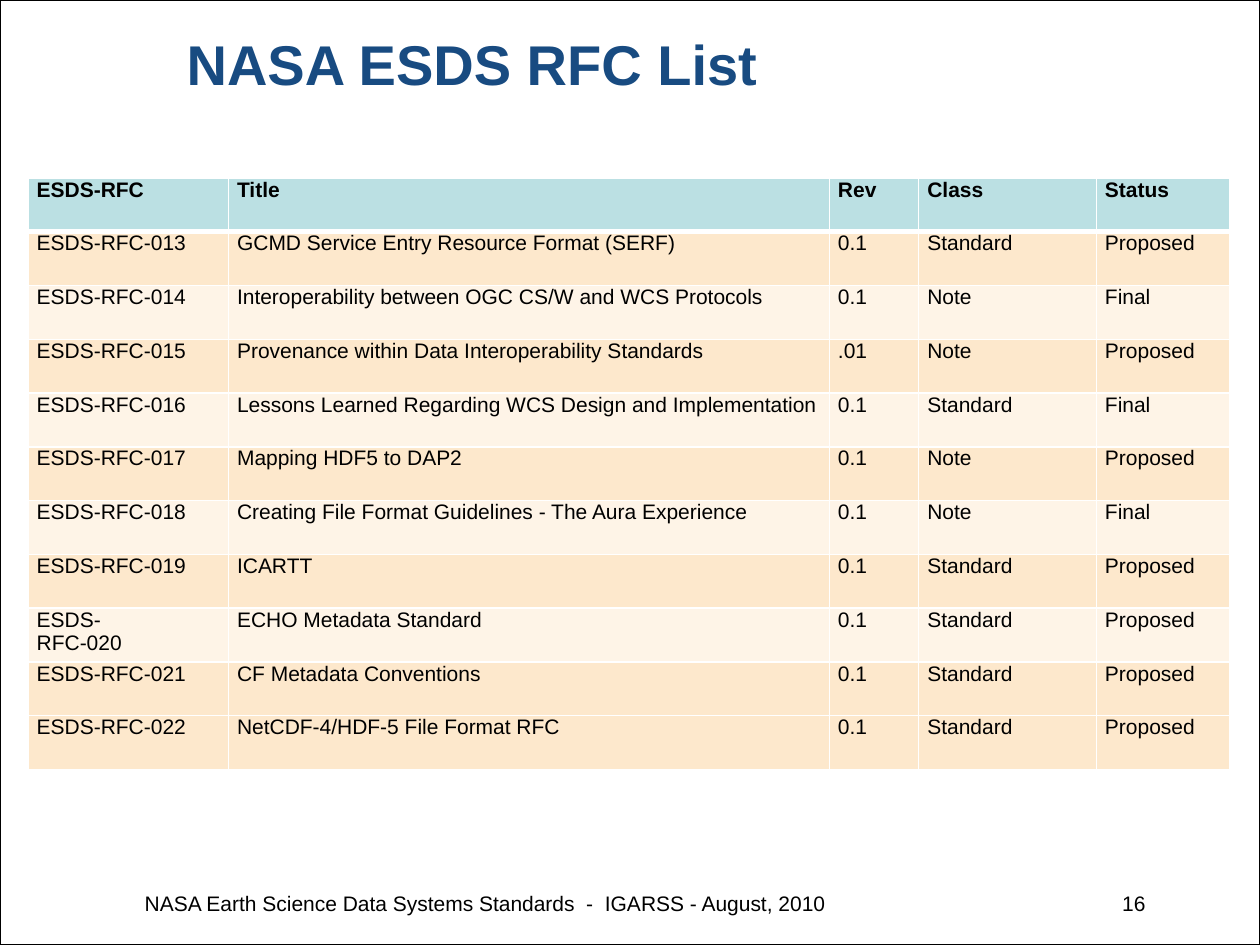
from lxml.etree import SubElement
from pptx import Presentation
from pptx.dml.color import RGBColor
from pptx.enum.shapes import MSO_SHAPE
from pptx.enum.text import MSO_ANCHOR, MSO_AUTO_SIZE, PP_ALIGN
from pptx.oxml.ns import qn
from pptx.util import Pt

COLUMN_WIDTHS = [114.5, 343.4, 51.1, 101.5, 76.3]
ROW_HEIGHT = 30.75
HEADINGS = ("ESDS-RFC", "Title", "Rev", "Class", "Status")
RFCS = [
    ("ESDS-RFC-013", "GCMD Service Entry Resource Format (SERF)", "0.1", "Standard", "Proposed"),
    ("ESDS-RFC-014", "Interoperability between OGC CS/W and WCS Protocols", "0.1", "Note", "Final"),
    ("ESDS-RFC-015", "Provenance within Data Interoperability Standards", ".01", "Note", "Proposed"),
    ("ESDS-RFC-016", "Lessons Learned Regarding WCS Design and Implementation", "0.1", "Standard", "Final"),
    ("ESDS-RFC-017", "Mapping HDF5 to DAP2", "0.1", "Note", "Proposed"),
    ("ESDS-RFC-018", "Creating File Format Guidelines - The Aura Experience", "0.1", "Note", "Final"),
    ("ESDS-RFC-019", "ICARTT", "0.1", "Standard", "Proposed"),
    ("ESDS-\nRFC-020", "ECHO Metadata Standard", "0.1", "Standard", "Proposed"),
    ("ESDS-RFC-021", "CF Metadata Conventions", "0.1", "Standard", "Proposed"),
    ("ESDS-RFC-022", "NetCDF-4/HDF-5 File Format RFC", "0.1", "Standard", "Proposed"),
]


def color(value):
    return RGBColor.from_string(value)


class SlideBuilder:
    font_name = "Arial"
    text_color = "000000"
    title_color = "184B81"
    border_color = "FFFFFF"
    header_fill = "BBE0E3"
    dark_fill = "FDE8CC"
    light_fill = "FEF4E7"

    def __init__(self, slide):
        self.slide = slide

    def set_text(self, text_frame, text, size=12, bold=False, text_color=None, align=PP_ALIGN.LEFT):
        text_frame.text = text
        for paragraph in text_frame.paragraphs:
            paragraph.alignment = align
            paragraph.font.name = self.font_name
            paragraph.font.size = Pt(size)
            paragraph.font.bold = bold
            paragraph.font.color.rgb = color(text_color or self.text_color)

    def frame(self, width, height):
        shape = self.slide.shapes.add_shape(MSO_SHAPE.RECTANGLE, 0, 0, width, height)
        shape.shadow.inherit = False
        shape.fill.background()
        shape.line.color.rgb = color(self.text_color)
        shape.line.width = Pt(0.75)

    def title(self, text, left, top, width, height):
        title = self.slide.shapes.title
        title.left, title.top, title.width, title.height = map(Pt, (left, top, width, height))
        text_frame = title.text_frame
        text_frame.auto_size = MSO_AUTO_SIZE.NONE
        text_frame.vertical_anchor = MSO_ANCHOR.MIDDLE
        self.set_text(text_frame, text, 32, True, self.title_color)
        text_frame.paragraphs[0].line_spacing = 0.85

    def text(self, text, left, top, width, height, align=PP_ALIGN.LEFT):
        text_box = self.slide.shapes.add_textbox(Pt(left), Pt(top), Pt(width), Pt(height))
        text_box.text_frame.word_wrap = True
        self.set_text(text_box.text_frame, text, align=align)

    def borders(self, cell, top, bottom):
        properties = cell._tc.get_or_add_tcPr()
        for side, width in (("L", 1), ("R", 1), ("T", top), ("B", bottom)):
            line = SubElement(properties, qn(f"a:ln{side}"), w=str(Pt(width)))
            fill = SubElement(line, qn("a:solidFill"))
            SubElement(fill, qn("a:srgbClr"), val=self.border_color)

    def row_fill(self, row, last_row):
        if row == 0:
            return self.header_fill
        return self.dark_fill if row % 2 or row == last_row else self.light_fill

    def table(self, rows, left, top, column_widths, row_height):
        table = self.slide.shapes.add_table(
            len(rows), len(column_widths), Pt(left), Pt(top),
            Pt(sum(column_widths)), Pt(row_height * len(rows))).table
        table.horz_banding = False
        for column, width in zip(table.columns, column_widths):
            column.width = Pt(width)
        for row, texts in enumerate(rows):
            table.rows[row].height = Pt(row_height)
            for column, text in enumerate(texts):
                cell = table.cell(row, column)
                cell.margin_left = cell.margin_right = Pt(5)
                cell.margin_top = cell.margin_bottom = 0
                self.borders(cell, 3 if row == 1 else 1, 3 if row == 0 else 1)
                cell.fill.solid()
                cell.fill.fore_color.rgb = color(self.row_fill(row, len(rows) - 1))
                self.set_text(cell.text_frame, text, bold=row == 0)


def main():
    presentation = Presentation()
    presentation.slide_width, presentation.slide_height = Pt(720), Pt(540)
    builder = SlideBuilder(presentation.slides.add_slide(presentation.slide_layouts[5]))
    builder.frame(presentation.slide_width, presentation.slide_height)
    builder.title("NASA ESDS RFC List", 99.4, 5.8, 603.4, 67)
    builder.table([HEADINGS, *RFCS], 16, 101.7, COLUMN_WIDTHS, ROW_HEIGHT)
    builder.text("16", 594.7, 505.4, 67, 28, PP_ALIGN.RIGHT)
    builder.text("NASA Earth Science Data Systems Standards  -  IGARSS - August, 2010",
                 75.6, 505.4, 476.6, 28)
    presentation.save("out.pptx")


if __name__ == "__main__":
    main()
